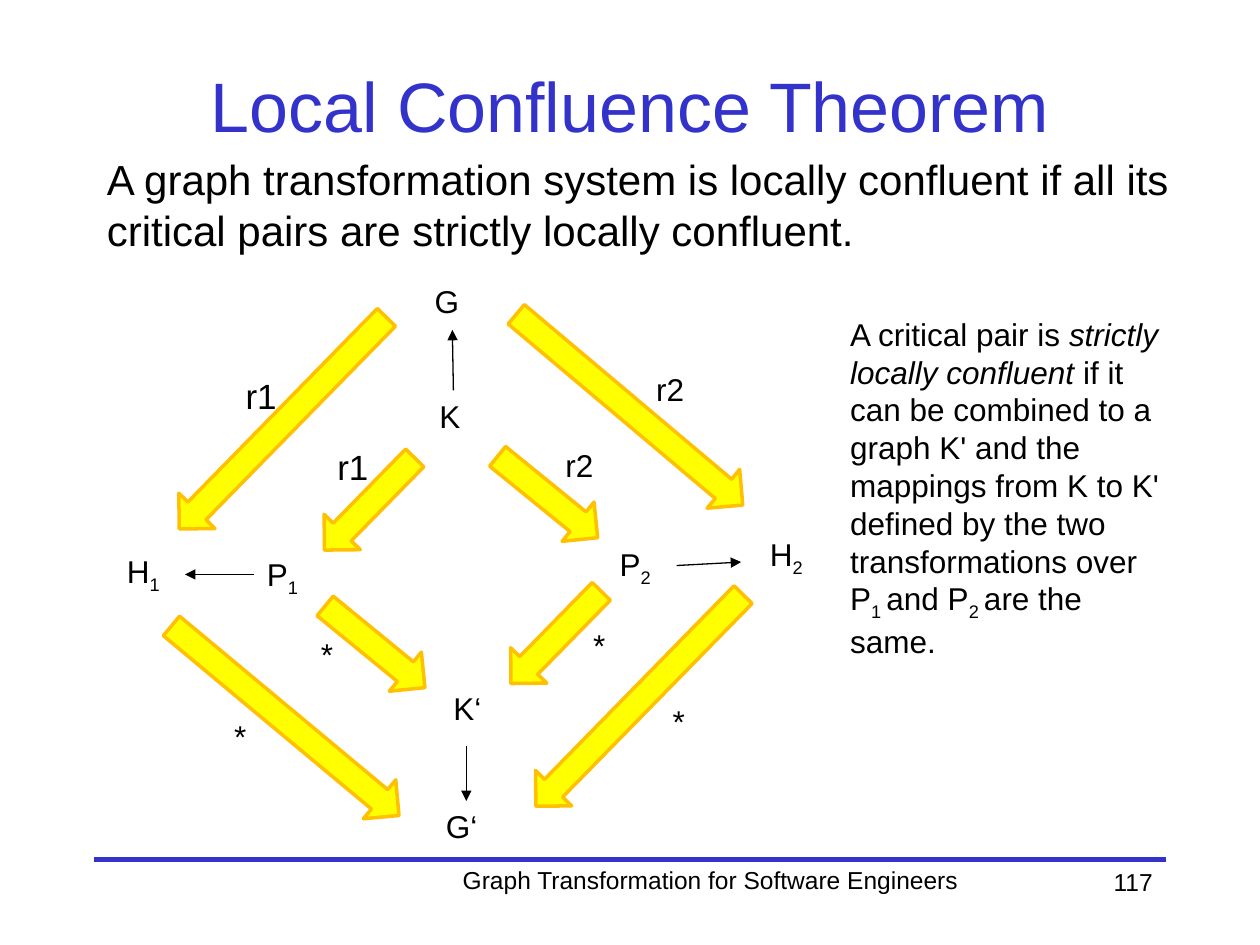
import lxml.etree
import pptx
import pptx.dml.color
import pptx.enum.shapes
import pptx.enum.text
import pptx.oxml.ns
import pptx.util

Cm, Pt = pptx.util.Cm, pptx.util.Pt
ALIGN = pptx.enum.text.PP_ALIGN
ANCHOR = pptx.enum.text.MSO_ANCHOR

THEME = {
    "font": "Arial",
    "ink": "000000", "accent": "3333CC", "arrow": "FFFF00", "arrow edge": "FFC000",
    "title": 40, "body": 24, "large label": 20, "label": 18, "footer": 14,
    "thin": 0.75, "edge": 2, "rule": 3,
}

# Each text is a list of (words, style) spans.
TITLE = [("Local Confluence Theorem", "")]
THEOREM = [("A graph transformation system is locally confluent if all its "
            "critical pairs are strictly locally confluent.", "")]
DEFINITION = [
    ("A critical pair is ", ""),
    ("strictly locally confluent", "italic"),
    (" if it can be combined to a graph K' and the mappings from K to K' "
     "defined by the two transformations over P", ""),
    ("1 ", "sub"), ("and P", ""), ("2 ", "sub"), ("are the same.", ""),
]
FOOTER = [("Graph Transformation for Software Engineers", "")]
PAGE_NUMBER = [("117", "")]

# Graph name, index, left, top, width (cm)
GRAPHS = [
    ("G", "", 8.51, 5.56, 1.04), ("K", "", 8.61, 7.87, 1.04),
    ("H", "1", 2.31, 11, 1.68), ("H", "2", 15.27, 10.67, 1.68),
    ("P", "1", 5.13, 11.07, 1.68), ("P", "2", 12.24, 10.87, 1.68),
    ("K‘", "", 8.89, 13.77, 1.35), ("G‘", "", 8.74, 16.15, 1.35),
]
# Step name, size, left, top, width (cm)
STEPS = [
    ("r1", "large label", 4.7, 7.42, 1.93), ("r2", "label", 12.98, 7.34, 3.12),
    ("r1", "large label", 6.55, 8.86, 1.93), ("r2", "label", 11.15, 8.86, 3.12),
    ("*", "label", 4.47, 14.33, 2.18), ("*", "label", 13.31, 14.02, 2.18),
    ("*", "label", 6.22, 12.67, 2.18), ("*", "label", 11.71, 12.5, 2.18),
]
# Block arrows by centre x, centre y (cm) and rotation
DOWN_LEFT = 134.4
OUTER_ARROWS = [(5.7, 8.53, DOWN_LEFT), (12.69, 8.26, 40.1),
                (12.89, 14.12, DOWN_LEFT), (5.75, 14.53, 39.8)]
INNER_ARROWS = [(7.45, 10.16, DOWN_LEFT), (11.04, 10.02, 39.1),
                (11.21, 12.85, DOWN_LEFT), (7.56, 13.04, 39.3)]
OUTER_LENGTH, INNER_LENGTH, ARROW_HEIGHT = 5.97, 2.6, 1.02

# Mappings between graphs: start and end (cm)
MAPPINGS = [(9.14, 7.87, 9.12, 6.65), (13.64, 11.4, 14.94, 11.33),
            (5.13, 11.58, 3.73, 11.58), (9.4, 15.04, 9.4, 16.15)]
FOOTER_RULE = (1.9, 17.32, 23.5, 17.32)


def colour(name):
    return pptx.dml.color.RGBColor.from_string(THEME[name])


def set_all(target, values):
    for name, value in values.items():
        setattr(target, name, value)


def write(box, spans, size, ink="ink", align=ALIGN.LEFT, anchor=ANCHOR.TOP):
    set_all(box.text_frame, {"word_wrap": True, "vertical_anchor": anchor,
                             "auto_size": pptx.enum.text.MSO_AUTO_SIZE.NONE})
    para = box.text_frame.paragraphs[0]
    para.alignment = align
    for words, style in spans:
        span = para.add_run()
        span.text = words
        set_all(span.font, {"name": THEME["font"], "size": Pt(THEME[size]),
                            "italic": style == "italic"})
        span.font.color.rgb = colour(ink)
        if style == "sub":
            span._r.get_or_add_rPr().set("baseline", "-25000")
    return para


def place(box, left, top, width, height):
    set_all(box, {"left": Cm(left), "top": Cm(top),
                  "width": Cm(width), "height": Cm(height)})


def add_text(page, spans, size, area, align=ALIGN.LEFT):
    write(page.shapes.add_textbox(*map(Cm, area)), spans, size, align=align)


def add_line(page, ends, ink, weight, arrowhead=False):
    line = page.shapes.add_connector(
        pptx.enum.shapes.MSO_CONNECTOR.STRAIGHT, *map(Cm, ends))
    line.line.color.rgb = colour(ink)
    line.line.width = Pt(THEME[weight])
    qn = pptx.oxml.ns.qn
    if arrowhead:
        lxml.etree.SubElement(line.line._get_or_add_ln(), qn("a:tailEnd"), type="triangle")
    lxml.etree.SubElement(line._element.spPr, qn("a:effectLst"))


def add_block_arrow(page, centre_x, centre_y, rotation, length):
    arrow = page.shapes.add_shape(
        pptx.enum.shapes.MSO_SHAPE.RIGHT_ARROW,
        Cm(centre_x - length / 2), Cm(centre_y - ARROW_HEIGHT / 2),
        Cm(length), Cm(ARROW_HEIGHT))
    arrow.rotation = rotation
    arrow.shadow.inherit = False
    arrow.fill.solid()
    arrow.fill.fore_color.rgb = colour("arrow")
    arrow.line.color.rgb = colour("arrow edge")
    arrow.line.width = Pt(THEME["edge"])


def add_diagram(page):
    for arrows, length in ((OUTER_ARROWS, OUTER_LENGTH), (INNER_ARROWS, INNER_LENGTH)):
        for centre_x, centre_y, rotation in arrows:
            add_block_arrow(page, centre_x, centre_y, rotation, length)
    for ends in MAPPINGS:
        add_line(page, ends, "ink", "thin", arrowhead=True)
    for name, index, left, top, width in GRAPHS:
        spans = [(name, "")] + ([(index, "sub")] if index else [])
        add_text(page, spans, "label", (left, top, width, 1.02))
    for name, size, left, top, width in STEPS:
        add_text(page, [(name, "")], size, (left, top, width, 1.02))


def main():
    deck = pptx.Presentation()
    set_all(deck, {"slide_width": Cm(25.4), "slide_height": Cm(19.05)})
    page = deck.slides.add_slide(deck.slide_layouts[1])

    add_line(page, FOOTER_RULE, "accent", "rule")
    title, body = page.placeholders
    place(title, 1.9, 0.51, 21.59, 3.18)
    write(title, TITLE, "title", "accent", ALIGN.CENTER, ANCHOR.MIDDLE)
    place(body, 1.9, 2.97, 22.2, 2.59)
    properties = write(body, THEOREM, "body")._p.get_or_add_pPr()
    for name in ("marL", "indent"):
        properties.set(name, "0")
    lxml.etree.SubElement(properties, pptx.oxml.ns.qn("a:buNone"))

    add_diagram(page)
    add_text(page, DEFINITION, "label", (16.89, 6.22, 7.01, 7.19))
    add_text(page, FOOTER, "footer", (6.91, 17.32, 14.83, 1.27), ALIGN.CENTER)
    add_text(page, PAGE_NUMBER, "footer", (18.21, 17.35, 5.28, 1.27), ALIGN.RIGHT)
    deck.save("out.pptx")


if __name__ == "__main__":
    main()
